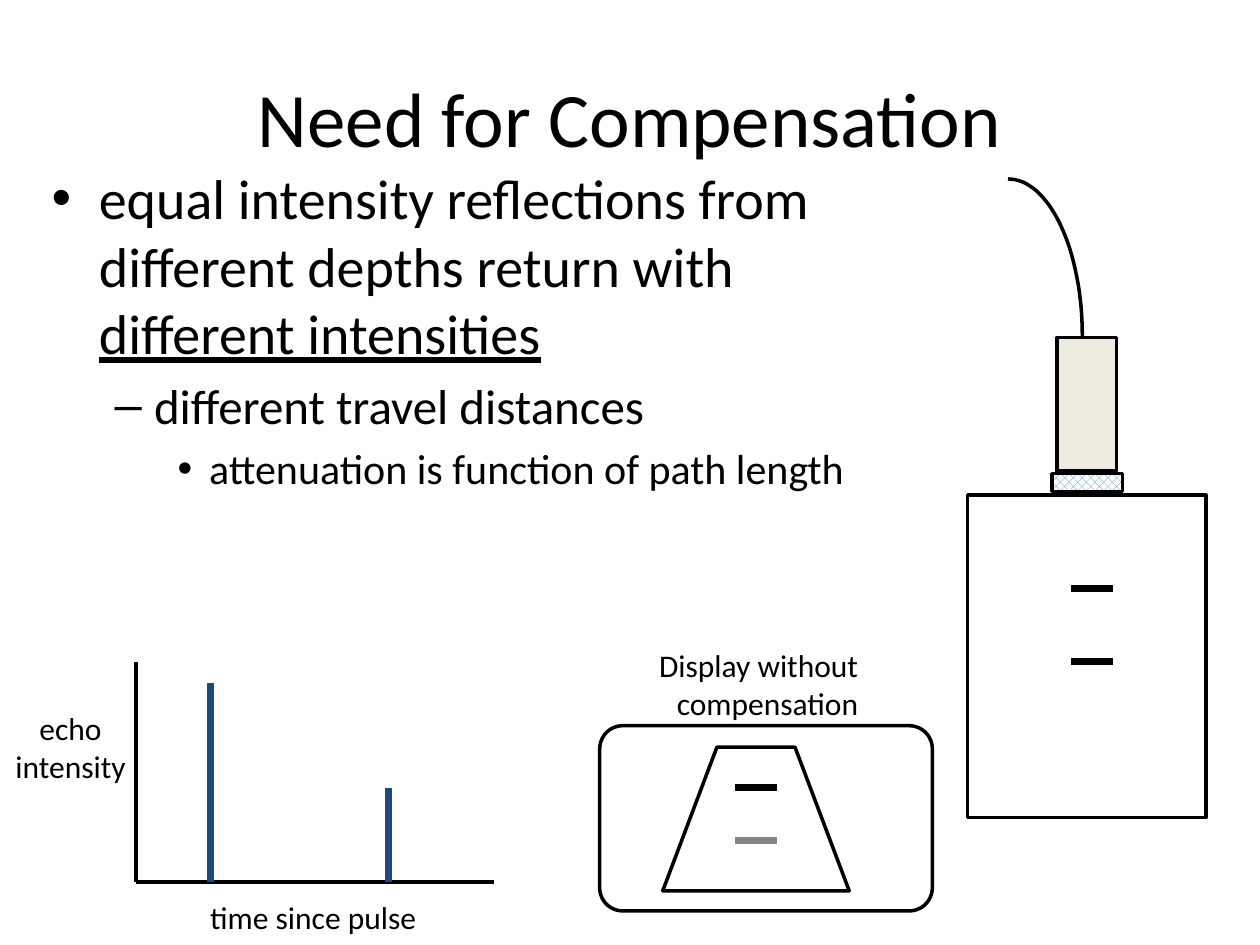
from math import cos, pi, sin

from lxml.etree import SubElement
from pptx import Presentation
from pptx.dml.color import RGBColor
from pptx.enum.dml import MSO_PATTERN
from pptx.enum.shapes import MSO_CONNECTOR, MSO_SHAPE
from pptx.enum.text import MSO_ANCHOR, PP_ALIGN
from pptx.oxml.ns import qn
from pptx.util import Inches, Pt

FONT = "Calibri"
BLACK, WHITE, GREY = "000000", "FFFFFF", "868686"
CREAM, BLUE, NAVY = "EEECE1", "4F81BD", "1F497D"
THIN, THICK = 2, 4


def color(value):
    return RGBColor.from_string(value)


def format_span(span, size, **extra):
    for name, value in {"name": FONT, "size": Pt(size), **extra}.items():
        setattr(span.font, name, value)
    span.font.color.rgb = color(BLACK)


def place(shape, left, top, width, height):
    values = {"left": left, "top": top, "width": width, "height": height}
    for name, value in values.items():
        setattr(shape, name, Inches(value))


def outline(shape, fill=None):
    shape.shadow.inherit = False
    shape.line.color.rgb = color(BLACK)
    shape.line.width = Pt(THIN)
    if fill:
        shape.fill.solid()
        shape.fill.fore_color.rgb = color(fill)
    else:
        shape.fill.background()


def add_box(page, kind, left, top, width, height, fill=None):
    box = page.shapes.add_shape(kind, *map(Inches, (left, top, width, height)))
    outline(box, fill)
    return box


def add_path(page, points, close):
    builder = page.shapes.build_freeform(
        *[round(value * 1000) for value in points[0]], scale=Inches(1) / 1000)
    builder.add_line_segments(
        [(round(x * 1000), round(y * 1000)) for x, y in points[1:]], close=close)
    outline(builder.convert_to_shape())


def add_line(page, x1, y1, x2, y2, width=THIN, shade=BLACK):
    line = page.shapes.add_connector(
        MSO_CONNECTOR.STRAIGHT, *map(Inches, (x1, y1, x2, y2)))
    line.line.width = Pt(width)
    line.line.color.rgb = color(shade)
    SubElement(line._element.spPr, qn("a:effectLst"))


def add_label(page, lines, left, top, width, height, align):
    box = page.shapes.add_textbox(*map(Inches, (left, top, width, height)))
    frame = box.text_frame
    frame.word_wrap = False
    for number, text in enumerate(lines):
        para = frame.add_paragraph() if number else frame.paragraphs[0]
        para.alignment = align
        span = para.add_run()
        span.text = text
        format_span(span, 18)


def add_title(page):
    title = page.shapes.title
    place(title, 0.5, 0.3, 9, 1.25)
    frame = title.text_frame
    frame.text = "Need for Compensation"
    frame.vertical_anchor = MSO_ANCHOR.MIDDLE
    frame.paragraphs[0].alignment = PP_ALIGN.CENTER
    format_span(frame.paragraphs[0].runs[0], 44)


def add_body(page):
    body = page.placeholders[1]
    place(body, 0.31, 1.25, 6.6, 4.08)
    # One paragraph per outline level; each span is text and underline
    levels = [
        (32, [("equal intensity reflections from different depths return with ", False),
              ("different intensities", True)]),
        (28, [("different travel distances", False)]),
        (24, [("attenuation is function of path length", False)]),
    ]
    frame = body.text_frame
    for level, (size, spans) in enumerate(levels):
        para = frame.add_paragraph() if level else frame.paragraphs[0]
        para.level = level
        for text, underline in spans:
            span = para.add_run()
            span.text = text
            format_span(span, size, underline=underline)


def add_probe(page):
    # Transducer with its patterned face
    add_box(page, MSO_SHAPE.RECTANGLE, 8.39, 2.68, 0.47, 1.06, CREAM)
    face = add_box(page, MSO_SHAPE.RECTANGLE, 8.35, 3.76, 0.56, 0.14)
    face.fill.patterned()
    face.fill.pattern = MSO_PATTERN.PERCENT_50
    face.fill.fore_color.rgb = color(BLUE)
    face.fill.back_color.rgb = color(WHITE)
    # Cable: a quarter ellipse
    steps = 32
    angles = [pi / 2 * step / steps for step in range(steps + 1)]
    add_path(page, [(8 + 0.59 * sin(a), 2.67 - 1.25 * cos(a)) for a in angles], False)
    # Body with two equal reflectors
    add_box(page, MSO_SHAPE.RECTANGLE, 7.68, 3.93, 1.89, 2.56, WHITE)
    for y in (4.67, 5.25):
        add_line(page, 8.5, y, 8.83, y, THICK)


def add_display(page):
    screen = add_box(page, MSO_SHAPE.ROUNDED_RECTANGLE, 4.76, 5.76, 2.64, 1.47)
    screen.adjustments[0] = 0.125
    add_path(page, [(5.26, 7.07), (5.69, 5.93), (6.31, 5.93), (6.74, 7.07)], True)
    for y, shade in ((6.25, BLACK), (6.67, GREY)):
        add_line(page, 5.83, y, 6.17, y, THICK, shade)
    add_label(page, ["Display without", "compensation"],
              5.07, 5.08, 1.84, 0.64, PP_ALIGN.RIGHT)


def add_echo_plot(page):
    left, base = 1.08, 7
    # Axes
    add_line(page, left, 5.25, left, base)
    add_line(page, left, base, 3.92, base)
    # Echoes
    for x, top in ((1.67, 5.42), (3.08, 6.25)):
        add_line(page, x, top, x, base, THICK, NAVY)
    add_label(page, ["time since pulse"], 1.57, 7.08, 1.99, 0.37, PP_ALIGN.LEFT)
    add_label(page, ["echo", "intensity"], 0, 5.58, 1.12, 0.64, PP_ALIGN.CENTER)


def main():
    deck = Presentation()
    deck.slide_width, deck.slide_height = Inches(10), Inches(7.5)
    page = deck.slides.add_slide(deck.slide_layouts[1])
    add_title(page)
    add_body(page)
    add_probe(page)
    add_display(page)
    add_echo_plot(page)
    deck.save("out.pptx")


if __name__ == "__main__":
    main()
